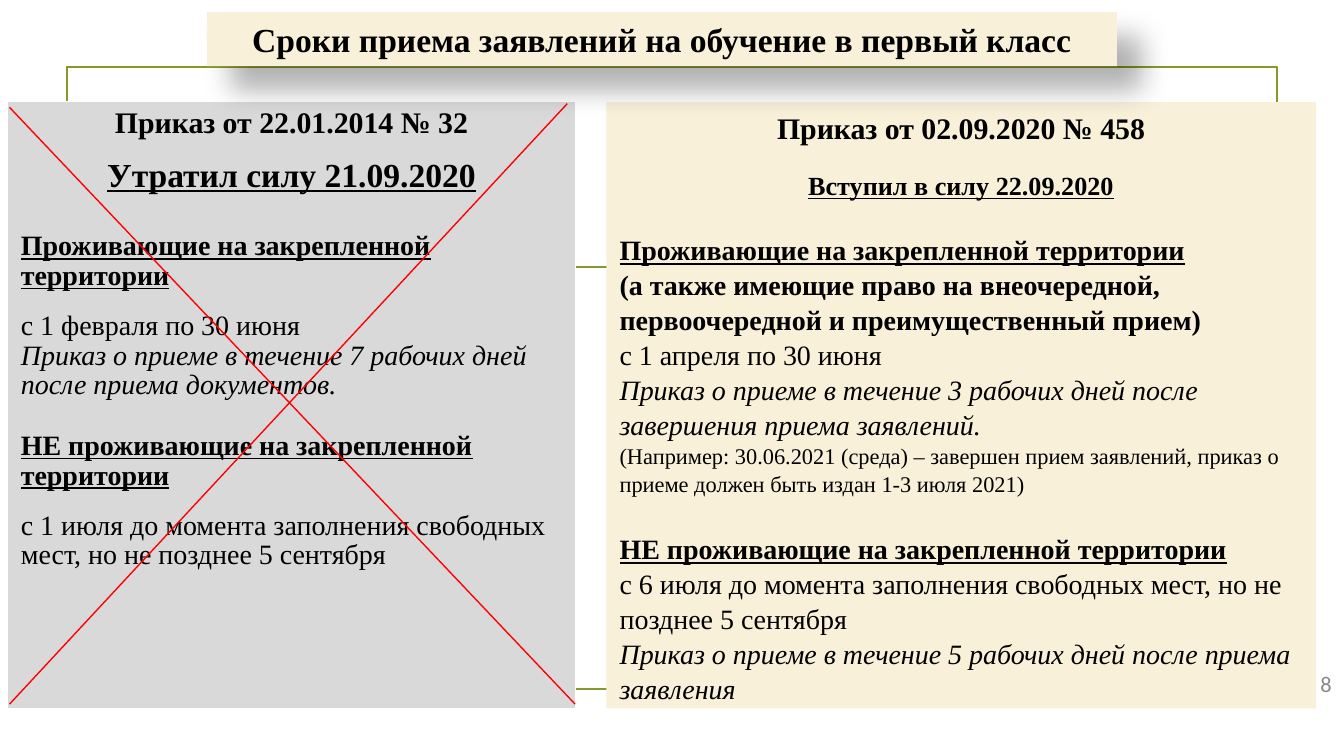
"""Build the slide that compares the old and new first-grade application periods."""
from dataclasses import dataclass

from lxml import etree
from pptx import Presentation
from pptx import util as u
from pptx.dml.color import RGBColor
from pptx.enum import shapes, text
from pptx.oxml import ns

Cm, Pt = u.Cm, u.Pt
LEFT, CENTER, RIGHT = text.PP_ALIGN.LEFT, text.PP_ALIGN.CENTER, text.PP_ALIGN.RIGHT


@dataclass(frozen=True)
class Theme:
    """Hold the colours, fonts and type sizes of the slide."""
    ink: str = "000000"
    muted: str = "898989"
    white: str = "FFFFFF"
    olive: str = "83992A"
    cream: str = "F8F0D9"
    grey: str = "D9D9D9"
    red: str = "FF0000"
    font: str = "Times New Roman"
    number_font: str = "Calibri"
    title: int = 18
    heading: int = 16
    subheading: int = 14
    body: int = 15
    note: int = 12


THEME = Theme()


@dataclass(frozen=True)
class Line:
    """Describe one paragraph; style letters are b, i and u."""
    words: str
    style: str = ""
    before: float = 0
    size: int = THEME.body
    align: int = LEFT
    color: str = THEME.ink
    font: str = THEME.font


OLD_ORDER = [
    Line("Приказ от 22.01.2014 № 32", "b", 0, THEME.heading, CENTER),
    Line("Утратил силу 21.09.2020", "bu", 10, THEME.title, CENTER),
    Line("Проживающие на закрепленной территории", "bu", 20),
    Line("с 1 февраля по 30 июня", "", 11),
    Line("Приказ о приеме в течение 7 рабочих дней после приема документов.", "i"),
    Line("НЕ проживающие на закрепленной территории", "bu", 16.5),
    Line("с 1 июля до момента заполнения свободных мест, но не позднее 5 сентября", "", 11),
]

NEW_ORDER = [
    Line("Приказ от 02.09.2020 № 458", "b", 0, THEME.heading, CENTER),
    Line("Вступил в силу 22.09.2020", "bu", 12, THEME.subheading, CENTER),
    Line("Проживающие на закрепленной территории", "bu", 16.5),
    Line("(а также имеющие право на внеочередной, первоочередной и преимущественный прием)", "b"),
    Line("с 1 апреля по 30 июня"),
    Line("Приказ о приеме в течение 3 рабочих дней после завершения приема заявлений.", "i"),
    Line("(Например: 30.06.2021 (среда) – завершен прием заявлений, приказ о приеме "
         "должен быть издан 1-3 июля 2021)", "", 0, THEME.note),
    Line("НЕ проживающие на закрепленной территории", "bu", 18),
    Line("с 6 июля до момента заполнения свободных мест, но не позднее 5 сентября"),
    Line("Приказ о приеме в течение 5 рабочих дней после приема заявления", "i"),
]


def rgb(color):
    """Turn a hex string into a colour."""
    return RGBColor.from_string(color)


def write(text_frame, lines, spacing=1.0):
    """Fill a text frame with styled paragraphs."""
    text_frame.word_wrap = True
    text_frame.text = "\n".join(line.words for line in lines)
    for paragraph, line in zip(text_frame.paragraphs, lines):
        paragraph.alignment = line.align
        paragraph.line_spacing = spacing
        paragraph.space_before = Pt(line.before)
        for run in paragraph.runs:
            font = run.font
            font.name, font.size = line.font, Pt(line.size)
            font.color.rgb = rgb(line.color)
            font.bold = "b" in line.style
            font.italic = "i" in line.style
            font.underline = "u" in line.style


def add_box(slide, box, fill=None, line=None):
    """Add a rectangle with an optional fill and outline."""
    shape = slide.shapes.add_shape(shapes.MSO_SHAPE.RECTANGLE, *map(Cm, box))
    shape.shadow.inherit = False
    if fill:
        shape.fill.solid()
        shape.fill.fore_color.rgb = rgb(fill)
    else:
        shape.fill.background()
    if line:
        shape.line.color.rgb = rgb(line)
        shape.line.width = Pt(1.25)
    else:
        shape.line.fill.background()
    return shape


def add_panel(slide, box, lines, anchor, spacing=1.0):
    """Add a cream rectangle with text."""
    shape = add_box(slide, box, THEME.cream)
    shape.text_frame.vertical_anchor = anchor
    write(shape.text_frame, lines, spacing)
    return shape


def add_line(slide, start, end, color, width):
    """Add a straight line between two points."""
    connector = slide.shapes.add_connector(
        shapes.MSO_CONNECTOR.STRAIGHT, *map(Cm, start + end))
    connector.line.color.rgb = rgb(color)
    connector.line.width = Pt(width)
    etree.SubElement(connector._element.spPr, ns.qn("a:effectLst"))


def add_color(parent, color):
    """Append an RGB colour element."""
    return etree.SubElement(parent, ns.qn("a:srgbClr"), val=color)


def add_shadow(shape):
    """Give a shape a soft shadow to the lower right."""
    effects = shape._element.spPr.find(ns.qn("a:effectLst"))
    shadow = etree.SubElement(
        effects, ns.qn("a:outerShdw"), blurRad=str(Pt(15)), dist=str(Pt(18)),
        dir="2700000", algn="tl", rotWithShape="0")
    etree.SubElement(add_color(shadow, THEME.ink), ns.qn("a:alpha"), val="30000")


def add_table_panel(slide, box, lines, spacing):
    """Add a one-cell table with white borders."""
    table = slide.shapes.add_table(1, 1, *map(Cm, box)).table
    cell = table.cell(0, 0)
    write(cell.text_frame, lines, spacing)
    cell.fill.solid()
    cell.fill.fore_color.rgb = rgb(THEME.grey)
    properties = cell._tc.get_or_add_tcPr()
    for index, (side, width) in enumerate((("L", 1), ("R", 1), ("T", 1), ("B", 3))):
        border = etree.Element(ns.qn("a:ln" + side), w=str(Pt(width)))
        add_color(etree.SubElement(border, ns.qn("a:solidFill")), THEME.white)
        properties.insert(index, border)


def add_page_number(slide, box, number):
    """Add the page number at the lower right."""
    text_frame = slide.shapes.add_textbox(*map(Cm, box)).text_frame
    text_frame.vertical_anchor = text.MSO_ANCHOR.MIDDLE
    write(text_frame, [Line(number, size=THEME.note, align=RIGHT,
                            color=THEME.muted, font=THEME.number_font)])


def main():
    """Build and save the presentation."""
    presentation = Presentation()
    presentation.slide_width, presentation.slide_height = Cm(25.4), Cm(14.29)
    slide = presentation.slides.add_slide(presentation.slide_layouts[6])

    add_box(slide, (1.27, 1.27, 22.86, 11.75), line=THEME.olive)
    add_line(slide, (2.92, 5.05), (22.5, 5.05), THEME.olive, 1.25)
    add_page_number(slide, (19.5, 12.55, 5.92, 0.76), "8")
    add_table_panel(slide, (0.14, 1.92, 10.74, 11.51), OLD_ORDER, 0.96)
    add_panel(slide, (11.46, 1.93, 13.41, 11.46), NEW_ORDER, text.MSO_ANCHOR.TOP, 1.04)
    add_line(slide, (0.18, 2.03), (10.87, 13.31), THEME.red, 0.75)
    add_line(slide, (10.72, 1.96), (0.18, 13.31), THEME.red, 0.75)
    title = Line("Сроки приема заявлений на обучение в первый класс",
                 "b", 0, THEME.title, CENTER)
    add_shadow(add_panel(slide, (3.91, 0.23, 17.2, 1.02), [title], text.MSO_ANCHOR.MIDDLE))

    presentation.save("out.pptx")


if __name__ == "__main__":
    main()
